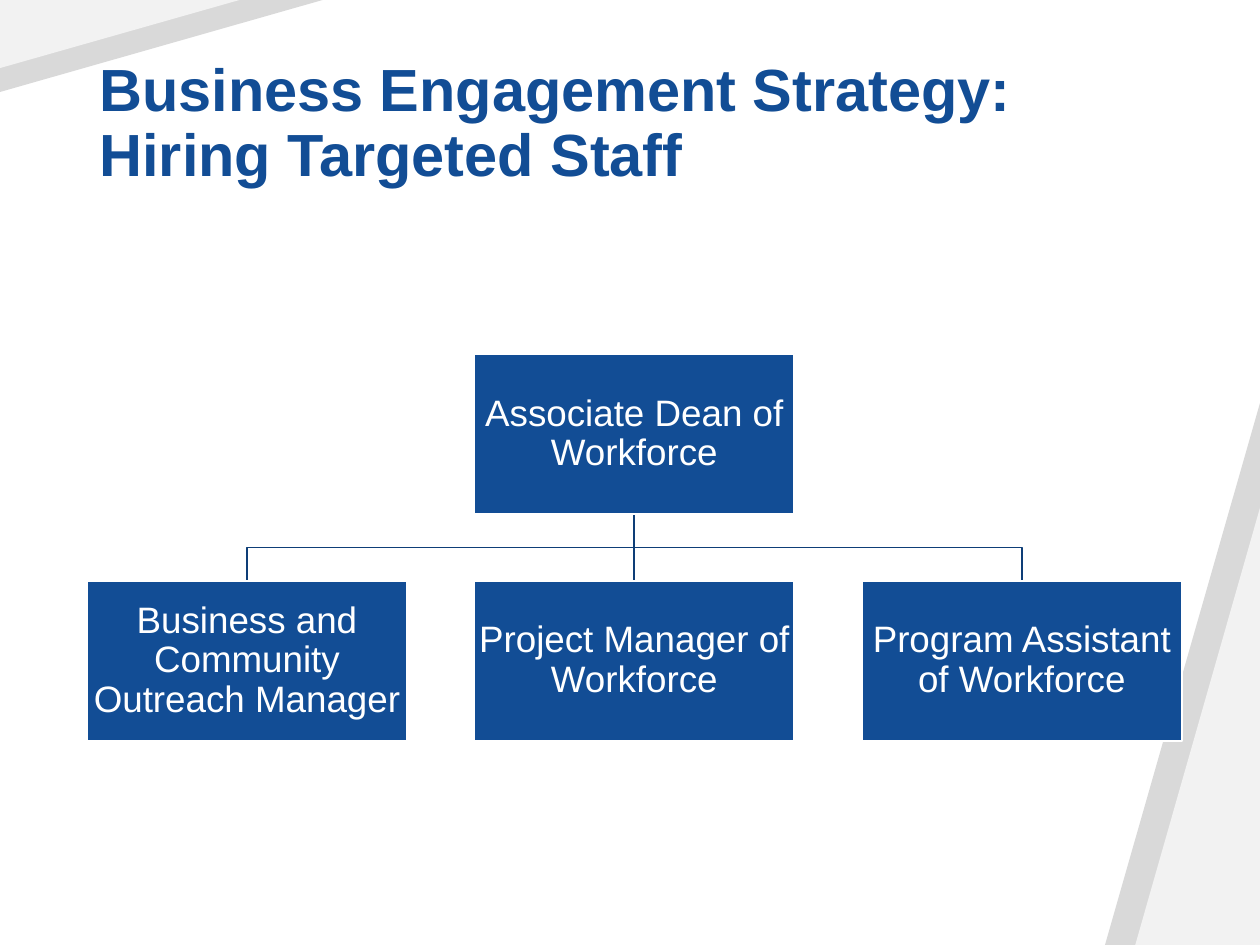
from pptx import Presentation, util as u
from pptx.dml.color import RGBColor
from pptx.enum import shapes as sh, text as tx
from lxml import etree

# Content
TITLE = "Business Engagement Strategy:\vHiring Targeted Staff"
HEAD = "Associate Dean of Workforce"
TEAM = [
    "Business and Community Outreach Manager",
    "Project Manager of Workforce",
    "Program Assistant of Workforce",
]
BLUE, LINE, WHITE = "124D95", "0E3E77", "FFFFFF"

# Page and chart grid, in inches
WIDE, HIGH = 10, 7.5
LEFT, STEP, BOX_W, BOX_H = 0.69, 3.075, 2.54, 1.27
ROWS = [2.81, 4.61]

# Corner wedges: width, height, colour, turn
WEDGES = [
    (1.23, 4.3, "D9D9D9", 0),
    (0.99, 3.47, "F2F2F2", 0),
    (2.56, 0.73, "D9D9D9", 180),
    (1.9, 0.54, "F2F2F2", 180),
]


def color(code):
    return RGBColor.from_string(code)


def inch(*sizes):
    return [u.Inches(s) for s in sizes]


def write(shape, words, size, ink, bold=False, align=tx.PP_ALIGN.LEFT,
          anchor=tx.MSO_ANCHOR.MIDDLE, inset=0.01):
    frame = shape.text_frame
    frame.word_wrap = True
    frame.auto_size = tx.MSO_AUTO_SIZE.NONE
    frame.vertical_anchor = anchor
    frame.margin_left = frame.margin_right = u.Inches(inset)
    frame.margin_top = frame.margin_bottom = u.Inches(min(inset, 0.05))
    frame.text = words
    para = frame.paragraphs[0]
    para.alignment, para.line_spacing = align, 0.9
    for run in para.runs:
        font = run.font
        font.name, font.size, font.bold = "Arial", u.Pt(size), bold
        font.color.rgb = color(ink)


def stroke(shape, code):
    shape.line.color.rgb = color(code)
    shape.line.width = u.Pt(1)


def add_wedge(slide, wide, high, code, turn):
    x, y = (0, 0) if turn else (WIDE - wide, HIGH - high)
    wedge = slide.shapes.add_shape(
        sh.MSO_SHAPE.ISOSCELES_TRIANGLE, *inch(x, y, wide, high))
    wedge.adjustments[0] = 1
    wedge.rotation = turn
    wedge.shadow.inherit = False
    wedge.fill.solid()
    wedge.fill.fore_color.rgb = color(code)
    wedge.line.fill.background()


def add_box(slide, words, col, row):
    box = slide.shapes.add_shape(
        sh.MSO_SHAPE.RECTANGLE,
        *inch(LEFT + col * STEP, ROWS[row], BOX_W, BOX_H))
    box.shadow.inherit = False
    box.fill.solid()
    box.fill.fore_color.rgb = color(BLUE)
    stroke(box, WHITE)
    write(box, words, 21, WHITE, align=tx.PP_ALIGN.CENTER)


def add_link(slide, col):
    mid, end = (LEFT + BOX_W / 2 + c * STEP for c in (1, col))
    top, low = ROWS[0] + BOX_H, ROWS[1]
    if col == 1:
        link = slide.shapes.add_connector(
            sh.MSO_CONNECTOR.STRAIGHT, *inch(mid, top, mid, low))
        etree.SubElement(
            link.element.spPr,
            "{http://schemas.openxmlformats.org/drawingml/2006/main}effectLst")
    else:
        bend = (top + low) / 2
        pen = slide.shapes.build_freeform(*inch(mid, top))
        pen.add_line_segments(
            [inch(mid, bend), inch(end, bend), inch(end, low)], close=False)
        link = pen.convert_to_shape()
        link.shadow.inherit = False
        link.fill.background()
    stroke(link, LINE)


def main():
    deck = Presentation()
    deck.slide_width, deck.slide_height = inch(WIDE, HIGH)
    slide = deck.slides.add_slide(deck.slide_layouts[5])

    # Background corners
    for wedge in WEDGES:
        add_wedge(slide, *wedge)

    # Title
    title = slide.shapes.title
    title.left, title.top, title.width, title.height = inch(
        LEFT, 0.4, 8.7, 1.15)
    write(title, TITLE, 34, BLUE, bold=True,
          anchor=tx.MSO_ANCHOR.BOTTOM, inset=0.1)

    # Organisation chart: links first, boxes over them
    for col in range(len(TEAM)):
        add_link(slide, col)
    add_box(slide, HEAD, 1, 0)
    for col, role in enumerate(TEAM):
        add_box(slide, role, col, 1)

    deck.save("out.pptx")


if __name__ == "__main__":
    main()
